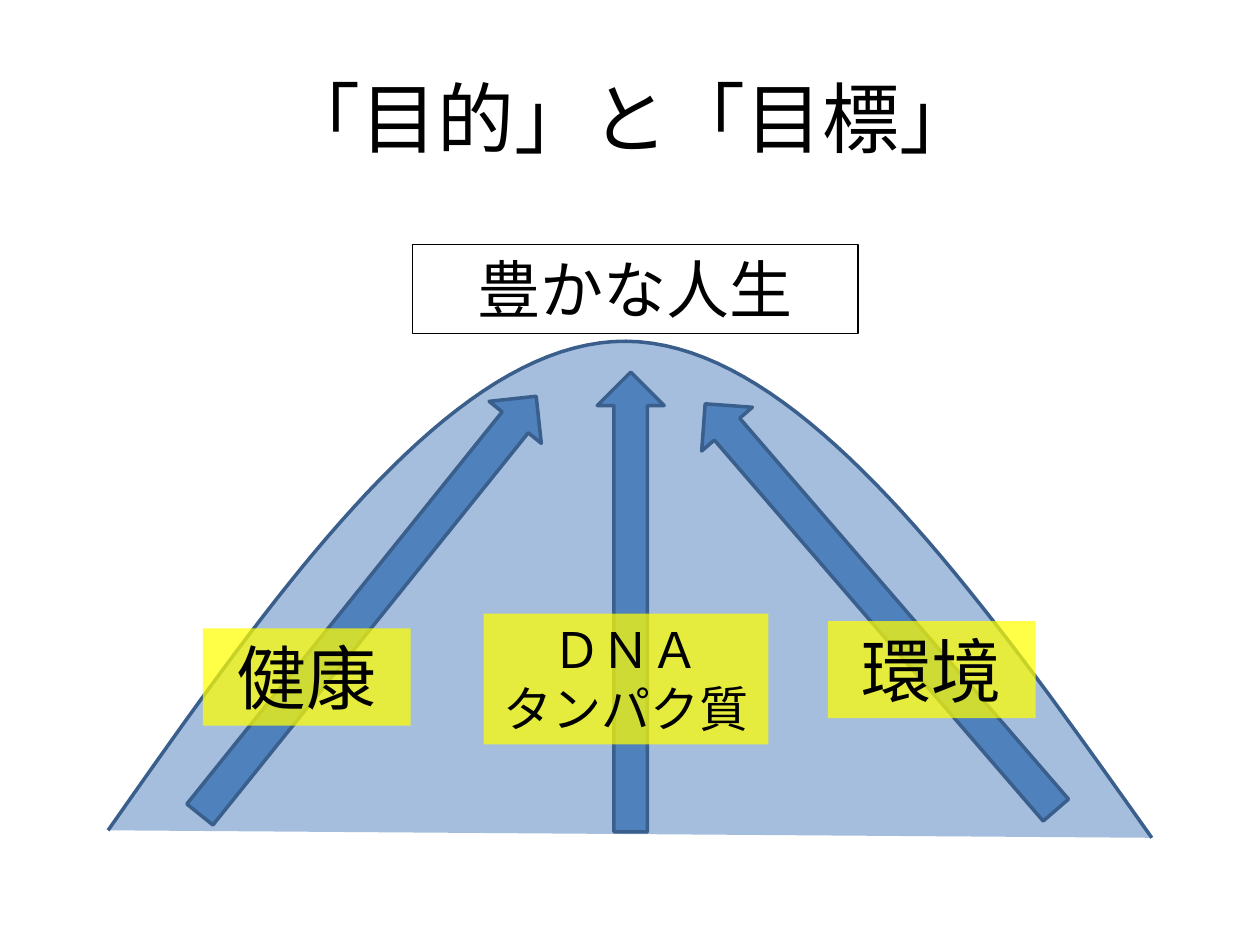
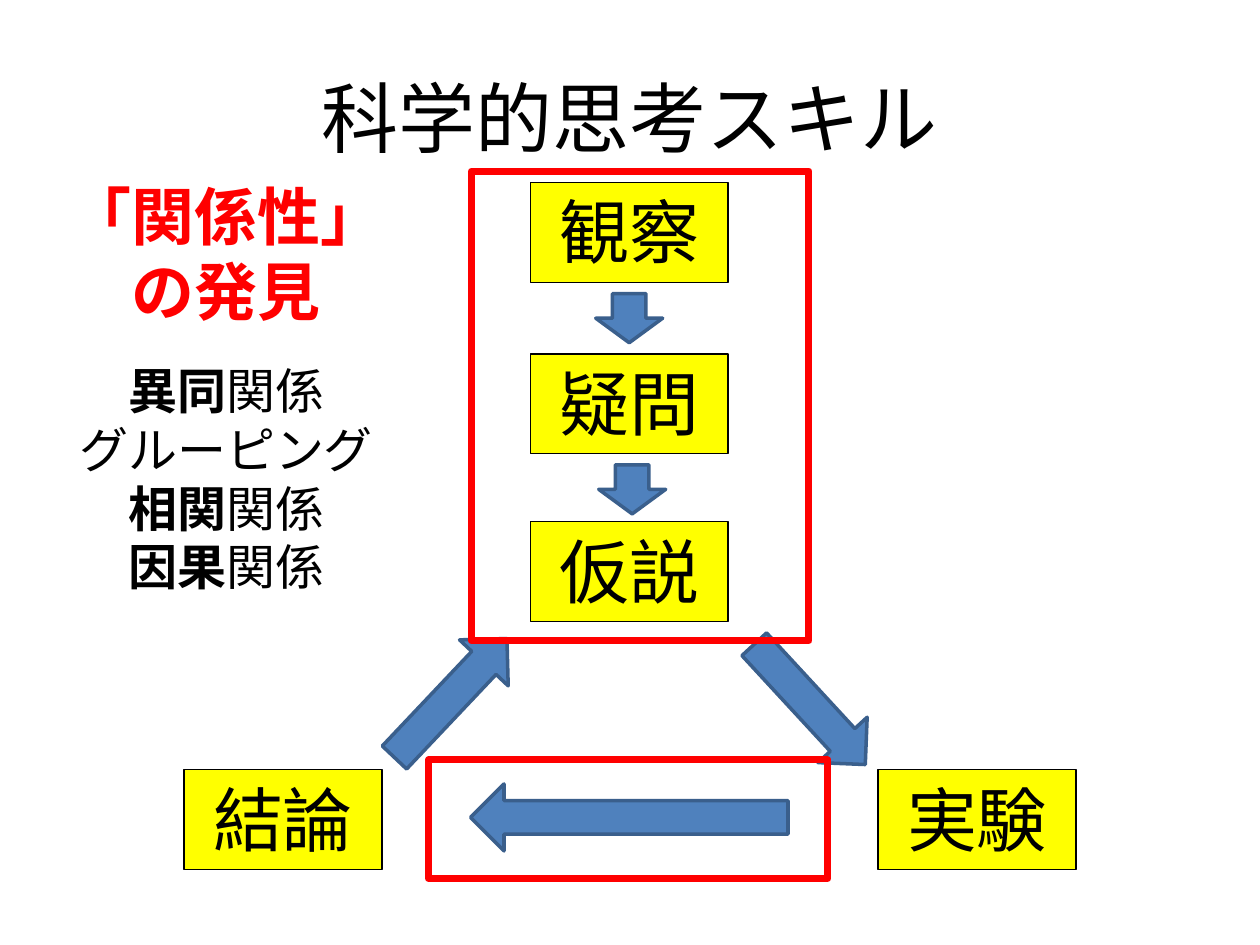
"""Build two slides on purpose, goals and scientific thinking skills."""
from dataclasses import dataclass

from lxml.etree import SubElement
from pptx import Presentation
from pptx.dml.color import RGBColor
from pptx.enum.shapes import MSO_SHAPE
from pptx.enum.text import MSO_ANCHOR, MSO_AUTO_SIZE, PP_ALIGN
from pptx.oxml.ns import qn
from pptx.util import Cm, Pt


@dataclass(frozen=True)
class Theme:
    font: str = "Cabin"
    black: str = "000000"
    red: str = "FF0000"
    yellow: str = "FFFF00"
    blue: str = "4F81BD"
    navy: str = "3A5F8C"
    title: int = 44
    label: int = 40
    heading: int = 36
    body: int = 28
    hairline: float = 0.75
    outline: float = 2
    frame: float = 4


def write(text_frame, text, *, size, color, font, bold=False, wrap=True,
          anchor=MSO_ANCHOR.TOP, fit=MSO_AUTO_SIZE.SHAPE_TO_FIT_TEXT):
    text_frame.word_wrap = wrap
    text_frame.auto_size = fit
    text_frame.vertical_anchor = anchor
    for row, line in enumerate(text.split("\n")):
        paragraph = text_frame.paragraphs[0] if row == 0 else text_frame.add_paragraph()
        paragraph.alignment = PP_ALIGN.CENTER
        for part, words in enumerate(line.split("*")):
            if words:
                run = paragraph.add_run()
                run.text = words
                run.font.name = font
                run.font.size = Pt(size)
                run.font.bold = bold or part % 2 == 1
                run.font.color.rgb = RGBColor.from_string(color)


def curve_points(start, *segments, steps=40):
    points = [start]
    for a, b, end in segments:
        for step in range(1, steps + 1):
            t = step / steps
            weights = (1 - t) ** 3, 3 * t * (1 - t) ** 2, 3 * t * t * (1 - t), t ** 3
            points.append(tuple(sum(w * p[axis] for w, p in zip(weights, (start, a, b, end)))
                                for axis in (0, 1)))
        start = end
    return points


class Deck:
    def __init__(self, theme):
        self.theme = theme
        self.presentation = Presentation()
        self.presentation.slide_width, self.presentation.slide_height = Cm(25.4), Cm(19.05)
        self.slide = None

    def start_slide(self, title):
        self.slide = self.presentation.slides.add_slide(self.presentation.slide_layouts[6])
        self.text(title, (1.27, 0.76, 22.86, 3.18), self.theme.title,
                  anchor=MSO_ANCHOR.MIDDLE, fit=MSO_AUTO_SIZE.NONE)

    def text(self, words, place, size, color=None, **style):
        holder = self.slide.shapes.add_textbox(*map(Cm, place))
        write(holder.text_frame, words, size=size, color=color or self.theme.black,
              font=self.theme.font, **style)

    def paint(self, shape, fill=None, line=None, width=None, opacity=100):
        shape.shadow.inherit = False
        if fill:
            shape.fill.solid()
            shape.fill.fore_color.rgb = RGBColor.from_string(fill)
            if opacity < 100:
                tint = shape.fill._xPr.find(qn("a:solidFill"))[0]
                SubElement(tint, qn("a:alpha")).set("val", str(opacity * 1000))
        else:
            shape.fill.background()
        if line:
            shape.line.color.rgb = RGBColor.from_string(line)
            shape.line.width = Pt(width)
        else:
            shape.line.fill.background()

    def box(self, place, words="", size=None, **look):
        shape = self.slide.shapes.add_shape(MSO_SHAPE.RECTANGLE, *map(Cm, place))
        self.paint(shape, **look)
        if words:
            write(shape.text_frame, words, size=size, color=self.theme.black,
                  font=self.theme.font)

    def frame(self, place):
        self.box(place, line=self.theme.red, width=self.theme.frame)

    def arrow(self, kind, place, rotation=0):
        shape = self.slide.shapes.add_shape(kind, *map(Cm, place))
        shape.rotation = rotation
        self.paint(shape, self.theme.blue, self.theme.navy, self.theme.outline)

    def hill(self, points):
        (x, y), *rest = points
        builder = self.slide.shapes.build_freeform(Cm(x), Cm(y))
        builder.add_line_segments([(Cm(px), Cm(py)) for px, py in rest], close=False)
        self.paint(builder.convert_to_shape(), self.theme.blue, self.theme.navy,
                   self.theme.outline, opacity=51)


def build_purpose(deck):
    theme = deck.theme
    deck.start_slide("「目的」と「目標」")
    deck.hill(curve_points((2.18, 16.74),
                           ((5.64, 11.81), (9.12, 6.86), (12.62, 6.88)),
                           ((16.13, 6.91), (19.69, 11.91), (23.22, 16.89))))
    deck.box((8.31, 4.93, 8.99, 1.8), "豊かな人生", theme.heading,
             line=theme.black, width=theme.hairline)
    for left, top, length, rotation in ((2.01, 11.53, 10.82, 308.8),
                                        (12.34, 11.56, 10.82, 229.2),
                                        (8.08, 11.46, 9.27, 270)):
        deck.arrow(MSO_SHAPE.RIGHT_ARROW, (left, top, length, 1.35), rotation)
    for words, size, place in (("健康", theme.label, (4.09, 12.67, 4.19, 1.96)),
                               ("環境", theme.label, (16.69, 12.52, 4.19, 1.96)),
                               ("ＤＮＡ\nタンパク質", theme.body, (9.75, 12.37, 5.74, 2.64))):
        deck.box(place, words, size, fill=theme.yellow, opacity=72)


def build_thinking_skills(deck):
    theme = deck.theme
    deck.start_slide("科学的思考スキル")
    for step, left, top in (("観察", 10.69, 3.68), ("実験", 17.7, 15.52), ("結論", 3.71, 15.52),
                            ("疑問", 10.69, 7.14), ("仮説", 10.69, 10.52)):
        deck.box((left, top, 3.99, 2.01), step, theme.label,
                 fill=theme.yellow, line=theme.black, width=theme.hairline)
    for left, top, length, rotation in ((12.01, 5.92, 0.99, 0), (12.07, 9.37, 0.99, 0),
                                        (15.65, 12.55, 3.3, 317.3), (8.41, 12.42, 3.3, 223.4),
                                        (12.01, 13.28, 6.4, 90)):
        deck.arrow(MSO_SHAPE.DOWN_ARROW, (left, top, 1.35, length), rotation)
    deck.frame((8.64, 15.32, 8.05, 2.39))
    deck.text("「関係性」\nの発見", (1.09, 3.45, 6.93, 3.33), theme.heading, theme.red,
              bold=True, wrap=False)
    deck.frame((9.5, 3.45, 6.81, 9.47))
    deck.text("*異同*関係\nグルーピング\n*相関*関係\n*因果*関係",
              (0.66, 7.14, 7.8, 5.05), theme.body)


def main():
    deck = Deck(Theme())
    build_purpose(deck)
    build_thinking_skills(deck)
    deck.presentation.save("out.pptx")


if __name__ == "__main__":
    main()
